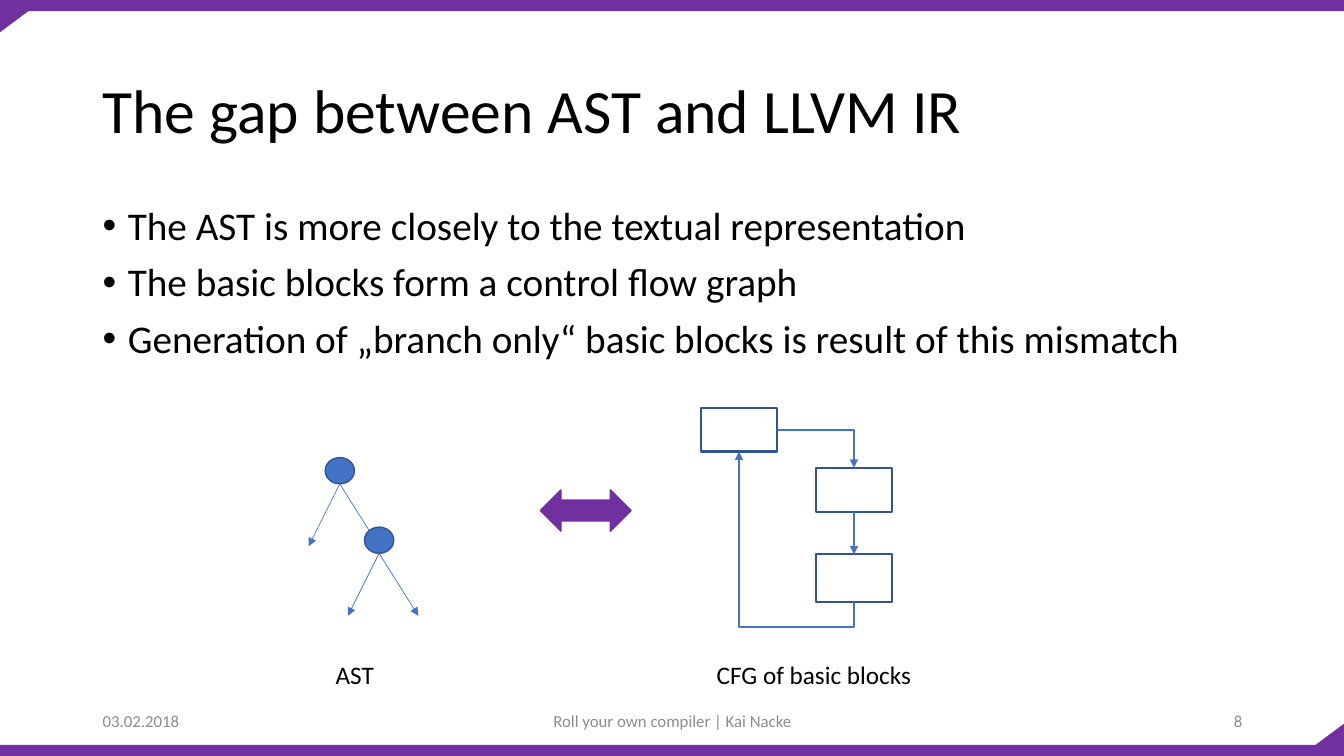
import pptx
import pptx.util
import pptx.dml.color
import pptx.enum.shapes
import pptx.enum.text
import pptx.oxml
import pptx.oxml.ns

Inches, Pt = pptx.util.Inches, pptx.util.Pt
SHAPE = pptx.enum.shapes.MSO_SHAPE
CONNECTOR = pptx.enum.shapes.MSO_CONNECTOR
ALIGN = pptx.enum.text.PP_ALIGN
ANCHOR = pptx.enum.text.MSO_ANCHOR
qn = pptx.oxml.ns.qn

# Content
TITLE = "The gap between AST and LLVM IR"
BULLETS = [
    "The AST is more closely to the textual representation",
    "The basic blocks form a control flow graph",
    "Generation of „branch only“ basic blocks is result of this mismatch",
]
FOOTERS = [  # text, left, width, alignment
    ("03.02.2018", 0.92, 3, ALIGN.LEFT),
    ("Roll your own compiler | Kai Nacke", 4.42, 4.5, ALIGN.CENTER),
    ("8", 9.42, 3, ALIGN.RIGHT),
]
CAPTIONS = [("AST", 3.23, 0.58), ("CFG of basic blocks", 7.01, 2.15)]
TREE_NODES = [(3.37, 4.54), (3.76, 5.23)]  # top centre
BLOCKS = {  # left, top, width, height
    "entry": (6.95, 4.05, 0.76, 0.43),
    "body": (8.09, 4.64, 0.76, 0.44),
    "latch": (8.09, 5.5, 0.76, 0.47),
}

# Theme and measures
THEME = {
    "font": "Calibri", "text": "000000", "muted": "8C8C8C",
    "accent": "7030A0", "blue": "4472C4", "outline": "325491",
    "title": 44, "bullet": 28, "caption": 18, "footer": 12,
}
WIDTH, HEIGHT, BAR = 13.33, 7.5, 0.11
CORNER_WIDTH, CORNER_HEIGHT = 0.43, 0.32
NODE_WIDTH, NODE_HEIGHT = 0.29, 0.26
BRANCH_X, BRANCH_Y = (-0.31, 0.39), 0.62
LOOP_DROP = 0.25

presentation = pptx.Presentation()
presentation.slide_width, presentation.slide_height = Inches(WIDTH), Inches(HEIGHT)
slide = presentation.slides.add_slide(presentation.slide_layouts[6])


def color(name):
    return pptx.dml.color.RGBColor.from_string(THEME[name])


def style(shape, fill=None, line=None, line_width=1):
    shape.shadow.inherit = False
    if fill:
        shape.fill.solid()
        shape.fill.fore_color.rgb = color(fill)
    else:
        shape.fill.background()
    if line:
        shape.line.color.rgb = color(line)
        shape.line.width = Pt(line_width)
    else:
        shape.line.fill.background()


def add_shape(kind, box, **look):
    shape = slide.shapes.add_shape(kind, *map(Inches, box))
    style(shape, **look)


def add_text(lines, box, size, ink="text", align=ALIGN.LEFT,
             anchor=ANCHOR.TOP, wrap=True):
    frame = slide.shapes.add_textbox(*map(Inches, box)).text_frame
    frame.word_wrap = wrap
    frame.vertical_anchor = anchor
    frame.text = "\n".join(lines)
    for paragraph in frame.paragraphs:
        paragraph.alignment = align
        paragraph.font.name = THEME["font"]
        paragraph.font.size = Pt(THEME[size])
        paragraph.font.color.rgb = color(ink)
    return frame.paragraphs


def add_arrow(start, end, width, kind=CONNECTOR.STRAIGHT):
    connector = slide.shapes.add_connector(kind, *map(Inches, (*start, *end)))
    connector.line.color.rgb = color("blue")
    connector.line.width = Pt(width)
    properties = connector._element.spPr
    tail = pptx.oxml.parse_xml(f'<a:tailEnd {pptx.oxml.ns.nsdecls("a")} type="triangle"/>')
    properties.find(qn("a:ln")).append(tail)
    properties.append(pptx.oxml.parse_xml(f'<a:effectLst {pptx.oxml.ns.nsdecls("a")}/>'))
    return properties


# Frame bars and corners
for top, x, y, direction in ((0, 0, 0, 1), (HEIGHT - BAR, WIDTH, HEIGHT, -1)):
    add_shape(SHAPE.RECTANGLE, (0, top, WIDTH, BAR), fill="accent")
    builder = slide.shapes.build_freeform(Inches(x), Inches(y))
    builder.add_line_segments([
        (Inches(x + direction * CORNER_WIDTH), Inches(y)),
        (Inches(x), Inches(y + direction * CORNER_HEIGHT)),
    ])
    style(builder.convert_to_shape(), fill="accent")

# Title, bullets, footers
add_text([TITLE], (0.92, 0.4, 11.5, 1.45), "title", anchor=ANCHOR.MIDDLE)[0].line_spacing = 0.9
for paragraph in add_text(BULLETS, (0.92, 2, 11.5, 1.8), "bullet"):
    paragraph.line_spacing = 0.9
    paragraph.space_before = Pt(10)
    paragraph_properties = paragraph._p.get_or_add_pPr()
    paragraph_properties.set("marL", str(Inches(0.25)))
    paragraph_properties.set("indent", str(-Inches(0.25)))
    for markup in ('buFont {} typeface="Arial"', 'buChar {} char="•"'):
        bullet = pptx.oxml.parse_xml("<a:" + markup.format(pptx.oxml.ns.nsdecls("a")) + "/>")
        paragraph_properties.insert_element_before(
            bullet, "a:tabLst", "a:defRPr", "a:extLst")
for text, left, width, align in FOOTERS:
    add_text([text], (left, 6.95, width, 0.4), "footer", "muted", align, ANCHOR.MIDDLE)

# Syntax tree
for x, y in TREE_NODES:
    add_shape(SHAPE.OVAL, (x - NODE_WIDTH / 2, y, NODE_WIDTH, NODE_HEIGHT),
              fill="blue", line="outline")
    base = y + NODE_HEIGHT
    for offset in BRANCH_X:
        add_arrow((x, base), (x + offset, base + BRANCH_Y), 0.5)

# Control flow graph
for box in BLOCKS.values():
    add_shape(SHAPE.RECTANGLE, box, line="outline", line_width=1.5)


def port(name, across, down):
    left, top, width, height = BLOCKS[name]
    return left + across * width, top + down * height


add_arrow(port("body", 0.5, 1), port("latch", 0.5, 0), 1)
branch = add_arrow(port("entry", 1, 0.5), port("body", 0.5, 0), 1, CONNECTOR.ELBOW)
branch.find(qn("a:prstGeom")).set("prst", "bentConnector2")

# The back edge is laid out sideways, then turned a quarter and mirrored
(start_x, start_y), (end_x, end_y) = port("latch", 0.5, 1), port("entry", 0.5, 1)
rise, run = start_y - end_y, start_x - end_x
left, top = (start_x + end_x - rise) / 2, (start_y + end_y - run) / 2
loop = add_arrow((left, top), (left + rise, top + run), 1, CONNECTOR.ELBOW)
loop.find(qn("a:xfrm")).set("rot", "5400000")
loop.find(qn("a:xfrm")).set("flipH", "1")
adjustment = pptx.oxml.parse_xml(
    f'<a:gd {pptx.oxml.ns.nsdecls("a")} name="adj1" '
    f'fmla="val {round(-LOOP_DROP / rise * 100000)}"/>')
loop.find(qn("a:prstGeom")).find(qn("a:avLst")).append(adjustment)

# Comparison arrow and captions
add_shape(SHAPE.LEFT_RIGHT_ARROW, (5.36, 4.86, 0.9, 0.41), fill="accent", line="accent")
for text, left, width in CAPTIONS:
    add_text([text], (left, 6.49, width, 0.4), "caption", wrap=False)

presentation.save("out.pptx")
